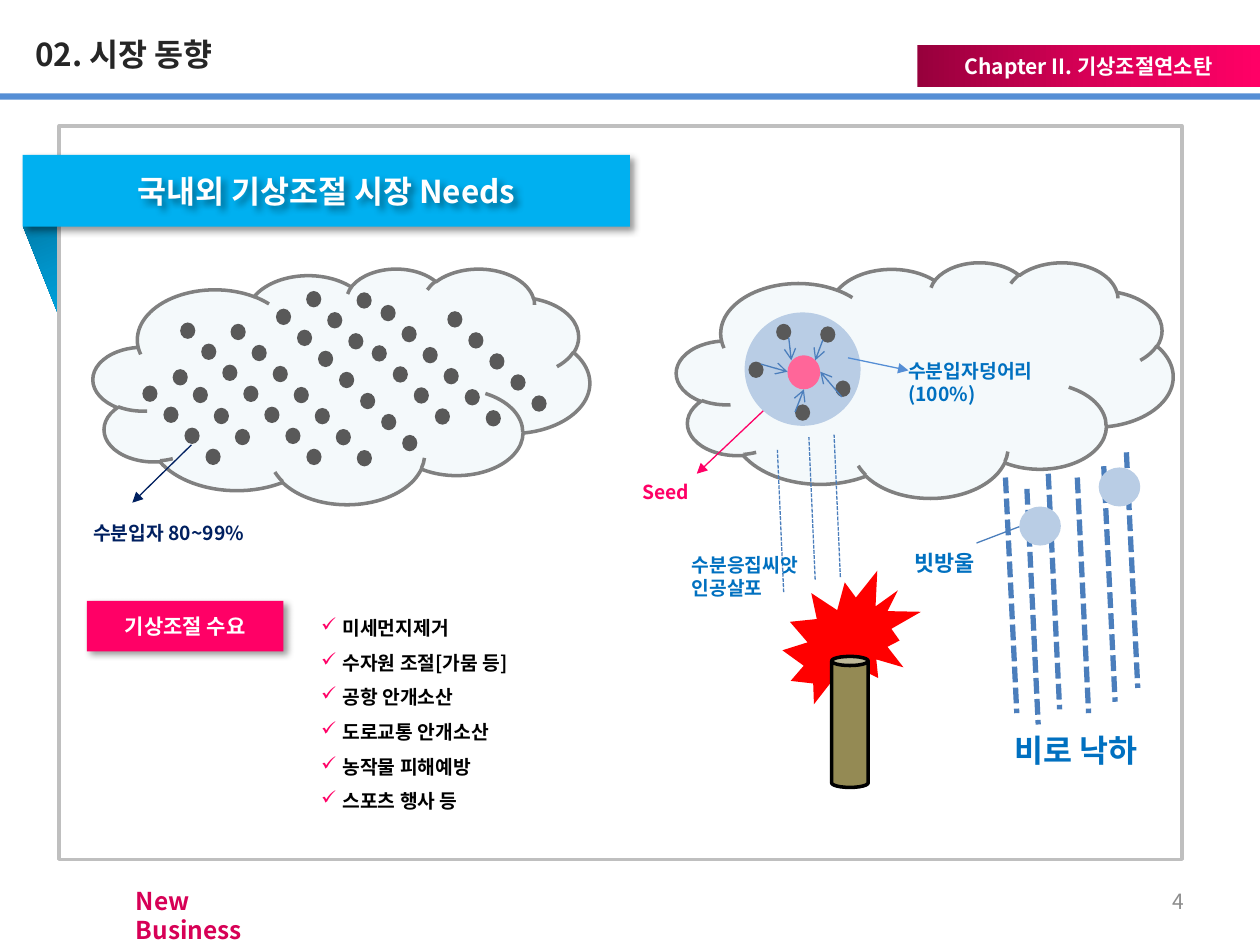
"""Build the slide on weather-control market needs with its cloud-seeding diagrams."""
from dataclasses import dataclass
from typing import Optional

from lxml.etree import SubElement
from pptx import Presentation
from pptx.dml.color import RGBColor
from pptx.enum.dml import MSO_LINE as Dash
from pptx.enum.shapes import MSO_CONNECTOR, MSO_SHAPE as Kind
from pptx.enum.text import MSO_ANCHOR as Anchor, PP_ALIGN as Align
from pptx.oxml.ns import qn
from pptx.util import Cm, Pt

FONT = "Noto Sans CJK KR"
WHITE = RGBColor(0xFF, 0xFF, 0xFF)
BLACK = RGBColor(0x00, 0x00, 0x00)
INK = RGBColor(0x26, 0x26, 0x26)
DOT_GRAY = RGBColor(0x59, 0x59, 0x59)
EDGE_GRAY = RGBColor(0x80, 0x80, 0x80)
PAGE_GRAY = RGBColor(0x8C, 0x8C, 0x8C)
FRAME_GRAY = RGBColor(0xBF, 0xBF, 0xBF)
RULE_BLUE = RGBColor(0x55, 0x8E, 0xD5)
RAIN_BLUE = RGBColor(0x4B, 0x7E, 0xBC)
TEXT_BLUE = RGBColor(0x00, 0x70, 0xC0)
SKY = RGBColor(0x00, 0xB0, 0xF0)
NAVY = RGBColor(0x00, 0x20, 0x60)
CLOUD = RGBColor(0xDB, 0xEE, 0xF4)
DROP = RGBColor(0xB9, 0xCD, 0xE5)
PINK = RGBColor(0xFF, 0x00, 0x66)
CRIMSON = RGBColor(0xD7, 0x00, 0x56)
SEED = RGBColor(0xFF, 0x66, 0x99)
RED = RGBColor(0xFF, 0x00, 0x00)
OLIVE = RGBColor(0x94, 0x8A, 0x54)
PINK_FADE = (RGBColor(0x97, 0x00, 0x3C), CRIMSON, PINK)
SKY_FADE = (RGBColor(0x00, 0x68, 0x8E), RGBColor(0x00, 0x94, 0xCA), SKY)


@dataclass
class Words:
    lines: list[str]
    size: float
    color: RGBColor
    align: Align = Align.LEFT
    anchor: Anchor = Anchor.TOP
    bold: bool = True
    bullet: Optional[str] = None


@dataclass
class Form:
    area: tuple[float, float, float, float]
    kind: Optional[Kind] = None
    fill: Optional[RGBColor] = None
    fade: Optional[tuple[RGBColor, ...]] = None
    alpha: Optional[int] = None
    edge: Optional[RGBColor] = None
    turn: float = 0
    shadow: bool = False
    words: Optional[Words] = None


@dataclass
class Link:
    start: tuple[float, float]
    end: tuple[float, float]
    color: RGBColor = RAIN_BLUE
    width: float = 0.75
    head: Optional[str] = None
    dashed: bool = False


def inches(*values: float) -> list[Cm]:
    """Turn slide-grid inches into centimetre lengths."""
    return [Cm(value * 2.54) for value in values]


def write(shape, words: Words) -> None:
    """Fill a shape's text frame."""
    frame = shape.text_frame
    frame.word_wrap = True
    frame.vertical_anchor = words.anchor
    for index, line in enumerate(words.lines):
        para = frame.add_paragraph() if index else frame.paragraphs[0]
        para.alignment = words.align
        if words.bullet:
            para.line_spacing = 1.5
            props = para._p.get_or_add_pPr()
            props.set("marL", str(Cm(0.43)))
            props.set("indent", str(-Cm(0.43)))
            tint = SubElement(props, qn("a:buClr"))
            SubElement(tint, qn("a:srgbClr"), val=str(PINK))
            SubElement(props, qn("a:buChar"), char=words.bullet)
        span = para.add_run()
        span.text = line
        style = {"name": FONT, "size": Pt(words.size), "bold": words.bold}
        for name, value in style.items():
            setattr(span.font, name, value)
        span.font.color.rgb = words.color
        SubElement(span._r.get_or_add_rPr(), qn("a:ea"), typeface=FONT)


def paint(shape, form: Form) -> None:
    """Apply fill, outline and shadow."""
    props = shape._element.spPr
    if form.fade:
        shape.fill.gradient()
        shape.fill.gradient_angle = 0
        stops = props.find(".//" + qn("a:gsLst"))
        for stop in list(stops):
            stops.remove(stop)
        for index, color in enumerate(form.fade):
            stop = SubElement(stops, qn("a:gs"), pos=str(index * 50000))
            SubElement(stop, qn("a:srgbClr"), val=str(color))
    elif form.fill is not None:
        shape.fill.solid()
        shape.fill.fore_color.rgb = form.fill
        if form.alpha:
            tint = props.find(qn("a:solidFill")).find(qn("a:srgbClr"))
            SubElement(tint, qn("a:alpha"), val=str(form.alpha * 1000))
    if form.edge is None:
        shape.line.fill.background()
    else:
        shape.line.color.rgb = form.edge
        shape.line.width = Pt(2)
    shape.shadow.inherit = False
    if form.shadow:
        cast = SubElement(props.find(qn("a:effectLst")), qn("a:outerShdw"), blurRad=str(Pt(4)),
                          dist=str(Pt(3)), dir="2700000", algn="tl", rotWithShape="0")
        tint = SubElement(cast, qn("a:srgbClr"), val=str(BLACK))
        SubElement(tint, qn("a:alpha"), val="40000")


def draw_form(page, form: Form) -> None:
    """Draw a preset shape or a text box."""
    area = inches(*form.area)
    if form.kind is None:
        shape = page.shapes.add_textbox(*area)
    else:
        shape = page.shapes.add_shape(form.kind, *area)
    shape.rotation = form.turn
    paint(shape, form)
    if form.words:
        write(shape, form.words)


def draw_link(page, link: Link) -> None:
    """Draw a straight line or arrow."""
    line = page.shapes.add_connector(MSO_CONNECTOR.STRAIGHT, *inches(*link.start, *link.end))
    line.line.color.rgb = link.color
    line.line.width = Pt(link.width)
    if link.dashed:
        line.line.dash_style = Dash.SQUARE_DOT
    props = line._element.spPr
    if link.head:
        SubElement(props.find(qn("a:ln")), qn("a:tailEnd"), type=link.head)
    SubElement(props, qn("a:effectLst"))


def dot(left: float, top: float) -> Form:
    """Describe one water particle."""
    return Form((left, top, 0.12, 0.13), Kind.OVAL, DOT_GRAY)


def cloud(left: float, top: float) -> Form:
    """Describe one cloud."""
    return Form((left, top, 3.94, 1.87), Kind.CLOUD, CLOUD, alpha=30, edge=EDGE_GRAY)


def label(area: tuple, size: float, color: RGBColor, *lines: str, **style) -> Form:
    """Describe a text box."""
    return Form(area, words=Words(list(lines), size, color, **style))


def slanted(tops: list, shift: tuple, width: float) -> list[Link]:
    """Describe parallel dashed lines."""
    return [Link((x, y), (x + shift[0], y + shift[1]), width=width, dashed=True) for x, y in tops]


def main() -> None:
    """Compose and save the slide."""
    centred = {"align": Align.CENTER, "anchor": Anchor.MIDDLE}
    banner = (0.18, 1.23, 4.82, 0.57)
    trails = [(1.43, 2.56, 7), (1.83, 2.57, 7), (2.19, 2.45, 7), (2.95, 2.74, 4),
              (3.02, 2.42, 6), (3.55, 2.47, 5), (2.43, 2.31, 3), (2.83, 2.32, 1),
              (1.13, 3.06, 4), (1.53, 3.07, 3), (1.37, 2.93, 1)]
    particles = [dot(x + 0.167 * step, y + 0.167 * step) for x, y, count in trails for step in range(count)]
    clump = [(5.94, 2.87), (6.16, 2.57), (6.31, 3.21), (6.63, 3.02), (6.51, 2.59)]
    pulls = [((6.04, 2.89), (6.25, 2.95)), ((6.26, 2.68), (6.28, 2.86)), ((6.53, 2.7), (6.47, 2.86)),
             ((6.68, 3.15), (6.51, 2.95)), ((6.31, 3.27), (6.38, 3.09))]
    rain = [(8.55, 3.79), (8.76, 3.7), (8.94, 3.59), (7.98, 3.79), (8.15, 3.88), (8.32, 3.76)]
    spray = [(6.22, 4.7), (6.47, 4.6), (6.67, 4.58)]
    needs = ["미세먼지제거", "수자원 조절[가뭄 등]", "공항 안개소산", "도로교통 안개소산", "농작물 피해예방", "스포츠 행사 등"]
    items = [
        Form((0, 0.74, 10, 0.05), Kind.RECTANGLE, RULE_BLUE),
        Form((7.28, 0.36, 2.72, 0.33), Kind.RECTANGLE, fade=PINK_FADE,
             words=Words(["Chapter II. 기상조절연소탄"], 12, WHITE, **centred)),
        label((0.98, 6.98, 1.49, 0.34), 14, CRIMSON, "New Business"),
        Form((0.44, 1.42, 0.81, 1.1), Kind.ISOSCELES_TRIANGLE, fade=SKY_FADE, turn=68.2),
        Form((0.47, 1, 8.91, 5.82), Kind.RECTANGLE, WHITE, edge=FRAME_GRAY),
        Form(banner, Kind.RECTANGLE, SKY, shadow=True),
        label((0.18, 0.23, 5.08, 0.4), 18, INK, "02. 시장 동향"),
        Form(banner, shadow=True, words=Words(["국내외 기상조절 시장 Needs"], 18, WHITE, **centred)),
        cloud(0.74, 2.13), *particles,
        Link((1.52, 3.53), (1.05, 3.99), NAVY, head="triangle"),
        label((0.64, 4.09, 1.74, 0.29), 11, NAVY, "수분입자 80~99%"),
        cloud(5.37, 2.08),
        label((5, 3.76, 1.05, 0.29), 11, PINK, "Seed"),
        Form((6.21, 4.53, 1.1, 1.06), Kind.EXPLOSION2, RED),
        Form((6.6, 5.21, 0.29, 1.04), Kind.CAN, OLIVE, edge=BLACK),
        Link((6.28, 3.05), (5.53, 3.76), PINK, head="triangle"),
        Form((5.91, 2.48, 0.92, 0.9), Kind.OVAL, DROP),
        Form((6.25, 2.82, 0.26, 0.27), Kind.OVAL, SEED),
        *[dot(*place) for place in clump],
        *[Link(start, end, head="arrow") for start, end in pulls],
        Link((6.73, 2.84), (7.21, 2.94), RULE_BLUE, head="triangle"),
        label((7.11, 2.8, 1.29, 0.47), 11, TEXT_BLUE, "수분입자덩어리", "(100%)"),
        *slanted(rain, (0.09, 1.87), 3),
        label((7.62, 5.75, 1.84, 0.4), 18, TEXT_BLUE, "비로 낙하", align=Align.CENTER),
        *slanted(spray, (-0.05, -1.13), 0.75),
        label((5.39, 4.34, 1.3, 0.47), 11, TEXT_BLUE, "수분응집씨앗 인공살포"),
        Form((0.69, 4.77, 1.56, 0.4), Kind.RECTANGLE, PINK, shadow=True,
             words=Words(["기상조절 수요"], 12, WHITE, **centred)),
        label((2.45, 4.75, 2.55, 1.73), 11, BLACK, *needs, bullet="✓"),
        *[Form((x, y, 0.33, 0.31), Kind.OVAL, DROP) for x, y in ((8.09, 4.02), (8.72, 3.71))],
        Link((8.09, 4.18), (7.75, 4.31)),
        label((7.16, 4.31, 1.18, 0.31), 12.5, TEXT_BLUE, "빗방울"),
        label((7.17, 6.95, 2.33, 0.4), 12, PAGE_GRAY, "4", align=Align.RIGHT, anchor=Anchor.MIDDLE, bold=False),
    ]
    deck = Presentation()
    deck.slide_width, deck.slide_height = inches(10, 7.5)
    page = deck.slides.add_slide(deck.slide_layouts[6])
    for item in items:
        draw = draw_link if isinstance(item, Link) else draw_form
        draw(page, item)
    deck.save("out.pptx")


if __name__ == "__main__":
    main()
